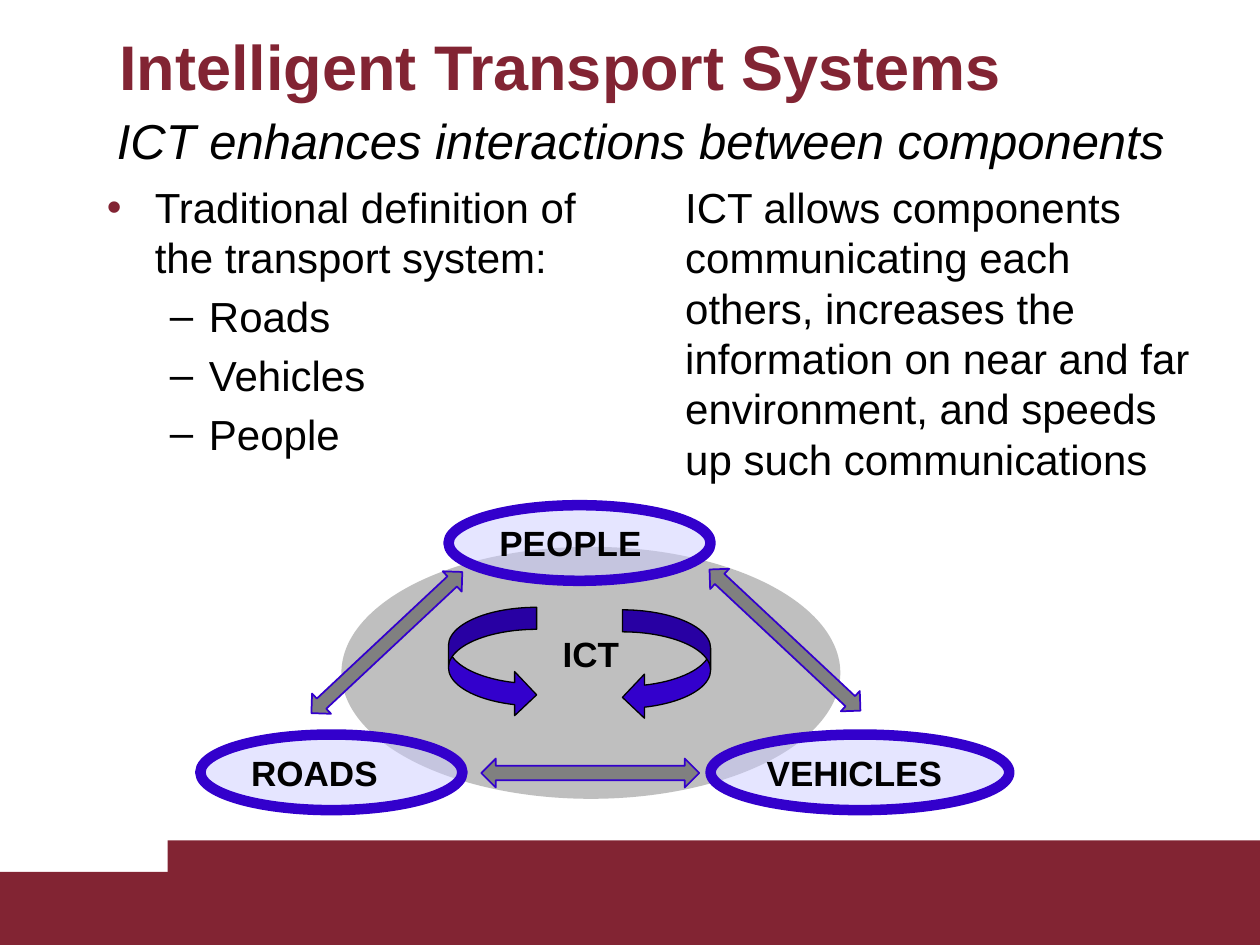
from pptx import Presentation, util as u
from pptx.dml.color import RGBColor
from pptx.enum import shapes, text
from lxml import etree
from pptx.oxml.ns import qn

# Content
TITLE = "Intelligent Transport Systems"
SUB = "ICT enhances interactions between components"
LEFT = [(0, "Traditional definition of the transport system:"),
        (1, "Roads"), (1, "Vehicles"), (1, "People")]
RIGHT = [(None, "ICT allows components communicating each others, increases the "
                "information on near and far environment, and speeds up such "
                "communications")]
BANDS = [(0, 6.92, 10, 0.58), (1.33, 6.67, 8.67, 0.83)]
HUB = ("ICT", (2.71, 4.34, 3.96, 2))
NODES = [("PEOPLE", (3.56, 4.01, 2.08, 0.6)),
         ("ROADS", (1.59, 5.83, 2.08, 0.6)),
         ("VEHICLES", (5.64, 5.83, 2.37, 0.6))]
LINKS = [((4.57, 5.27, 0.23, 1.73), 270),
         ((2.96, 4.28, 0.22, 1.64), 46.9),
         ((6.12, 4.26, 0.22, 1.64), 313.1)]
TURNS = [((3.56, 4.82, 0.7, 0.87), True), ((4.94, 4.84, 0.7, 0.87), False)]

THEME = dict(font="Arial", red="822433", ink="000000", blue="3300CC",
             pale="CCCCFF", gray="BFBFBF", mid="808080",
             title=36, sub=28, body=24, label=20, lead=1.2)
# Left margin, first-line indent and bullet for each level
LEVELS = {None: (0.38, 0, None), 0: (0.38, -0.38, "•"), 1: (0.81, -0.31, "–")}
KIND = shapes.MSO_SHAPE

deck = Presentation()
deck.slide_width, deck.slide_height = u.Inches(10), u.Inches(7.5)
slide = deck.slides.add_slide(deck.slide_layouts[6])


def tint(name):
    return RGBColor.from_string(THEME[name])


def style(par, size, color="ink", bold=False, slant=False):
    par.line_spacing = u.Pt(THEME[size] * THEME["lead"])
    for run in par.runs:
        font = run.font
        font.name, font.size = THEME["font"], u.Pt(THEME[size])
        font.bold, font.italic = bold, slant
        font.color.rgb = tint(color)


def draw(kind, box, fill, line=None, width=1):
    part = slide.shapes.add_shape(kind, *map(u.Inches, box))
    part.shadow.inherit = False
    part.fill.solid()
    part.fill.fore_color.rgb = tint(fill)
    if line:
        part.line.color.rgb = tint(line)
        part.line.width = u.Pt(width)
    else:
        part.line.fill.background()
    return part


def label(part, words, align, anchor):
    frame = part.text_frame
    frame.word_wrap = False
    frame.vertical_anchor = anchor
    frame.text = words
    frame.paragraphs[0].alignment = align
    style(frame.paragraphs[0], "label", bold=True)


def write(box):
    frame = slide.shapes.add_textbox(*map(u.Inches, box)).text_frame
    frame.word_wrap = True
    return frame


def indent(par, level):
    left, first, mark = LEVELS[level]
    props = par._p.get_or_add_pPr()
    props.set("marL", str(u.Inches(left)))
    props.set("indent", str(u.Inches(first)))
    if mark:
        hue = THEME["ink" if level else "red"]
        color = etree.SubElement(props, qn("a:buClr"))
        etree.SubElement(color, qn("a:srgbClr"), val=hue)
        etree.SubElement(props, qn("a:buFont"), typeface=THEME["font"])
        etree.SubElement(props, qn("a:buChar"), char=mark)


# Footer bands
for box in BANDS:
    draw(KIND.RECTANGLE, box, "red")

# Two text columns
for box, items in [((0.75, 1.39, 4.29, 2.38), LEFT),
                   ((4.96, 1.39, 4.62, 2.38), RIGHT)]:
    frame = write(box)
    for i, (level, words) in enumerate(items):
        par = frame.add_paragraph() if i else frame.paragraphs[0]
        par.text = words
        indent(par, level)
        if i:
            par.space_before = u.Pt(THEME["body"] * 0.2)
        style(par, "body")

# Hub ellipse
words, box = HUB
hub = draw(KIND.OVAL, box, "gray")
hub.text_frame.margin_top = u.Inches(0.39)
label(hub, words, text.PP_ALIGN.CENTER, text.MSO_ANCHOR.TOP)

# Half-transparent component ellipses
for words, box in NODES:
    node = draw(KIND.OVAL, box, "pale", "blue", 6)
    color = node._element.spPr.find(qn("a:solidFill"))[0]
    etree.SubElement(color, qn("a:alpha"), val="50000")
    label(node, words, text.PP_ALIGN.LEFT, text.MSO_ANCHOR.MIDDLE)

# Two-way arrows between components
for box, turn in LINKS:
    draw(KIND.UP_DOWN_ARROW, box, "mid", "blue").rotation = turn

# Curved arrows around the hub label
for box, flip in TURNS:
    bend = draw(KIND.CURVED_LEFT_ARROW, box, "blue", "ink", 0.75)
    if flip:
        bend._element.spPr.xfrm.set("flipH", "1")

# Title and subtitle
for words, box, size, color, bold in [
        (TITLE, (0.85, 0.17, 8.11, 0.55), "title", "red", True),
        (SUB, (0.83, 0.83, 8.83, 0.57), "sub", "ink", False)]:
    frame = write(box)
    frame.text = words
    style(frame.paragraphs[0], size, color, bold, not bold)

deck.save("out.pptx")
